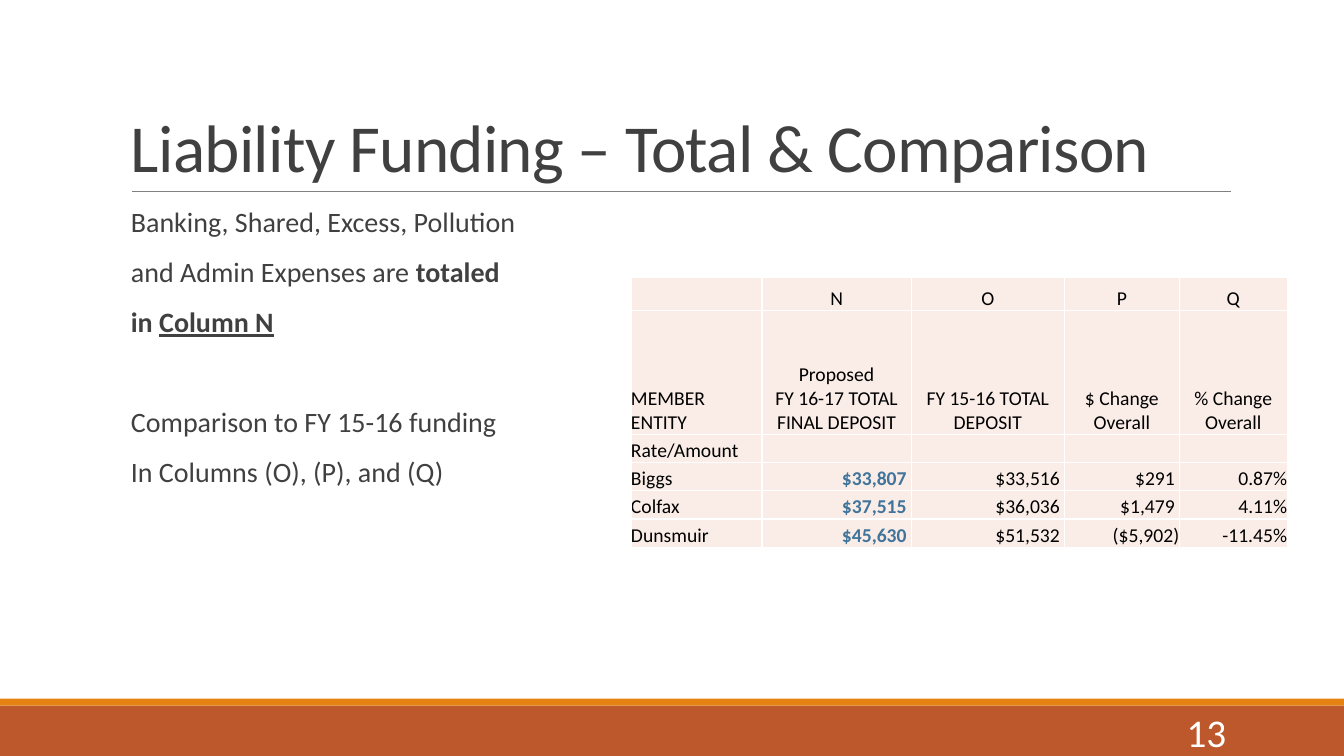
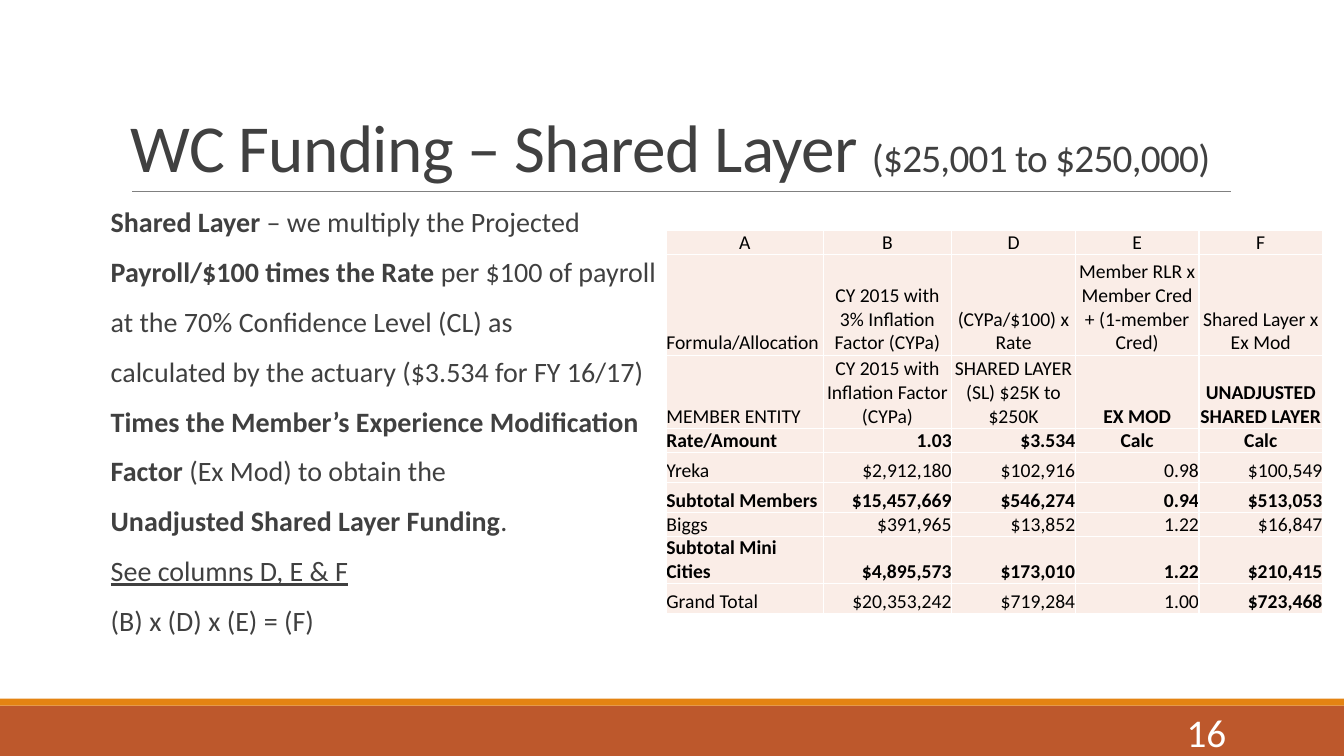
from lxml import etree
from pptx import Presentation
from pptx.dml.color import RGBColor
from pptx.enum.shapes import MSO_CONNECTOR, MSO_SHAPE
from pptx.enum.text import MSO_ANCHOR, PP_ALIGN
from pptx.oxml.ns import qn
from pptx.util import Inches, Pt

RECT = MSO_SHAPE.RECTANGLE
LINE = MSO_CONNECTOR.STRAIGHT
LOW, MID, TOP = MSO_ANCHOR.BOTTOM, MSO_ANCHOR.MIDDLE, MSO_ANCHOR.TOP
LEFT, RIGHT, MIDST = PP_ALIGN.LEFT, PP_ALIGN.RIGHT, PP_ALIGN.CENTER

WIDE, HIGH = Inches(13.33), Inches(7.5)
FONT = "Calibri"
HUES = {
    "band": "BD582C", "strip": "E48312", "rule": "808080", "text": "404040",
    "cell": "FAEDE7", "ink": "000000", "blue": "40749B", "white": "FFFFFF",
}


def hue(name):
    return RGBColor.from_string(HUES[name])


def place(x, y, w, h):
    """Turn percentages of the slide into lengths."""
    return [int(side * part / 100)
            for side, part in zip((WIDE, HIGH, WIDE, HIGH), (x, y, w, h))]


def style(run, size, tint, bold=False, under=False):
    font = run.font
    font.name, font.size, font.bold = FONT, Pt(size), bold
    font.underline = under
    font.color.rgb = hue(tint)


def add_box(slide, box, anchor, pad=0.1):
    frame = slide.shapes.add_textbox(*place(*box)).text_frame
    frame.word_wrap = True
    frame.vertical_anchor = anchor
    frame.margin_left = frame.margin_right = Inches(pad)
    return frame


def add_bar(slide, box, tint):
    bar = slide.shapes.add_shape(RECT, *place(*box))
    bar.shadow.inherit = False
    bar.fill.solid()
    bar.fill.fore_color.rgb = hue(tint)
    bar.line.fill.background()


def add_frame(slide, number):
    """Draw the footer bands, the rule under the title and the page number."""
    add_bar(slide, (0, 93.33, 100, 6.67), "band")
    add_bar(slide, (0, 92.4, 100, 0.93), "strip")
    x, y, end, _ = place(9.83, 25.33, 91.6, 0)
    rule = slide.shapes.add_connector(LINE, x, y, end, y)
    rule.line.color.rgb = hue("rule")
    rule.line.width = Pt(0.5)
    etree.SubElement(rule._element.spPr, qn("a:effectLst"))
    para = add_box(slide, (81.25, 94.13, 10.73, 5.33), MID).paragraphs[0]
    para.text = str(number)
    para.alignment = RIGHT
    style(para.runs[0], 28, "white")


def add_title(slide, parts):
    para = add_box(slide, (9, 4.13, 82.5, 21.2), LOW).paragraphs[0]
    para.line_spacing = 0.85
    for text, size in parts:
        run = para.add_run()
        run.text = text
        style(run, size, "text")
        run.font._element.set("spc", "-50")


def add_body(slide, box, lines, breaks=()):
    """Each line is a list of (text, marks); breaks open a one-line gap."""
    frame = add_box(slide, box, TOP, 0)
    frame.margin_left = Inches(0.1)
    for i, line in enumerate(lines):
        para = frame.add_paragraph() if i else frame.paragraphs[0]
        para.line_spacing = 0.9
        para.space_before = Pt(48 if i in breaks else 12)
        para.space_after = Pt(2)
        for text, marks in line:
            run = para.add_run()
            run.text = text
            style(run, 20, "text", "b" in marks, "u" in marks)


def fill_cell(cell, text, align, tint, bold):
    props = cell._tc.get_or_add_tcPr()
    for side in ("lnL", "lnR", "lnT", "lnB"):
        edge = etree.SubElement(props, qn("a:" + side), w=str(Pt(1)))
        paint = etree.SubElement(edge, qn("a:solidFill"))
        etree.SubElement(paint, qn("a:srgbClr"), val=HUES["white"])
    cell.fill.solid()
    cell.fill.fore_color.rgb = hue("cell")
    cell.margin_left = cell.margin_right = 0
    cell.margin_top = cell.margin_bottom = 0
    cell.vertical_anchor = LOW
    cell.text_frame.text = text
    for para in cell.text_frame.paragraphs:
        para.alignment = align
        for run in para.runs:
            style(run, 14, tint, bold)
        if not para.runs:
            etree.SubElement(para._p, qn("a:endParaRPr"), sz="1400")


def add_grid(slide, box, cols, rows, cells, heads, bold, tint="ink"):
    """Draw a table; cols and rows are weights, bold holds (row, column) pairs
    whose text takes the given tint."""
    x, y, w, h = place(*box)
    shape = slide.shapes.add_table(len(rows), len(cols), x, y, w, h)
    grid = shape.table
    grid.first_row = grid.horz_banding = False
    for col, part in zip(grid.columns, cols):
        col.width = int(w * part / sum(cols))
    for row, part in zip(grid.rows, rows):
        row.height = int(h * part / sum(rows))
    for r, line in enumerate(cells):
        for c, text in enumerate(line):
            if c == 0 and r > 0:
                align = LEFT
            elif r < heads or text.isalpha():
                align = MIDST
            else:
                align = RIGHT
            strong = (r, c) in bold
            fill_cell(grid.cell(r, c), text, align,
                      tint if strong else "ink", strong)


def add_page(deck, number, title):
    slide = deck.slides.add_slide(deck.slide_layouts[6])
    add_frame(slide, number)
    add_title(slide, title)
    return slide


def total_page(deck):
    slide = add_page(deck, 13, [("Liability Funding – Total & Comparison", 48)])
    add_body(slide, (9, 26.93, 82.5, 58.67), [
        [("Banking, Shared, Excess, Pollution", "")],
        [("and Admin Expenses are ", ""), ("totaled", "b")],
        [("in ", "b"), ("Column N", "bu")],
        [("Comparison to FY 15-16 funding", "")],
        [("In Columns (O), (P), and (Q)", "")],
    ], breaks=(3,))
    cells = [
        ("", "N", "O", "P", "Q"),
        ("MEMBER ENTITY", "Proposed\nFY 16-17 TOTAL FINAL DEPOSIT",
         "FY 15-16 TOTAL DEPOSIT", "$ Change Overall", "% Change Overall"),
        ("Rate/Amount", "", "", "", ""),
        ("Biggs", "$33,807 ", "$33,516 ", "$291 ", "0.87%"),
        ("Colfax", "$37,515 ", "$36,036 ", "$1,479 ", "4.11%"),
        ("Dunsmuir", "$45,630 ", "$51,532 ", "($5,902)", "-11.45%"),
    ]
    add_grid(slide, (46.95, 36.67, 48.83, 35.73),
             (1.3, 1.48, 1.52, 1.14, 1.07), (0.33, 1.23) + (0.28,) * 4,
             cells, 2, {(r, 1) for r in (3, 4, 5)}, "blue")


def layer_page(deck):
    slide = add_page(deck, 16, [("WC Funding – Shared Layer ", 48),
                                ("($25,001 to $250,000)", 28)])
    add_body(slide, (7.5, 26.93, 84, 61.6), [
        [("Shared Layer ", "b"), ("– we multiply the Projected", "")],
        [("Payroll/$100 times the Rate ", "b"), ("per $100 of payroll", "")],
        [("at the 70% Confidence Level (CL) as", "")],
        [("calculated by the actuary ($3.534 for FY 16/17)", "")],
        [("Times the Member’s Experience Modification", "b")],
        [("Factor ", "b"), ("(Ex Mod) to obtain the", "")],
        [("Unadjusted Shared Layer Funding", "b"), (".", "")],
        [("See columns D, E & F", "u")],
        [("(B) x (D) x (E) = (F)", "")],
    ])
    cells = [
        ("A", "B", "D", "E", "F"),
        ("Formula/Allocation", "CY 2015 with 3% Inflation Factor (CYPa)",
         "(CYPa/$100) x Rate", "Member RLR x Member Cred + (1-member Cred)",
         "Shared Layer x Ex Mod"),
        ("MEMBER ENTITY", "CY 2015 with Inflation Factor (CYPa)",
         "SHARED LAYER (SL) $25K to $250K", "EX MOD",
         "UNADJUSTED SHARED LAYER"),
        ("Rate/Amount", "1.03", "$3.534", "Calc", "Calc"),
        ("Yreka", "$2,912,180", "$102,916", "0.98", "$100,549"),
        ("Subtotal Members", "$15,457,669", "$546,274", "0.94", "$513,053"),
        ("Biggs", "$391,965", "$13,852", "1.22", "$16,847"),
        ("Subtotal Mini Cities", "$4,895,573", "$173,010", "1.22", "$210,415"),
        ("Grand Total", "$20,353,242", "$719,284", "1.00", "$723,468"),
    ]
    bold = {(r, c) for r in (3, 5, 7) for c in range(5)}
    add_grid(slide, (49.58, 30.53, 48.83, 47.87),
             (1.56, 1.28, 1.23, 1.23, 1.23),
             (0.22, 1, 0.73, 0.22, 0.3, 0.3, 0.22, 0.3, 0.3),
             cells, 3, bold | {(2, 3), (2, 4), (8, 4)})


def main():
    deck = Presentation()
    deck.slide_width, deck.slide_height = WIDE, HIGH
    total_page(deck)
    layer_page(deck)
    deck.save("out.pptx")


if __name__ == "__main__":
    main()
